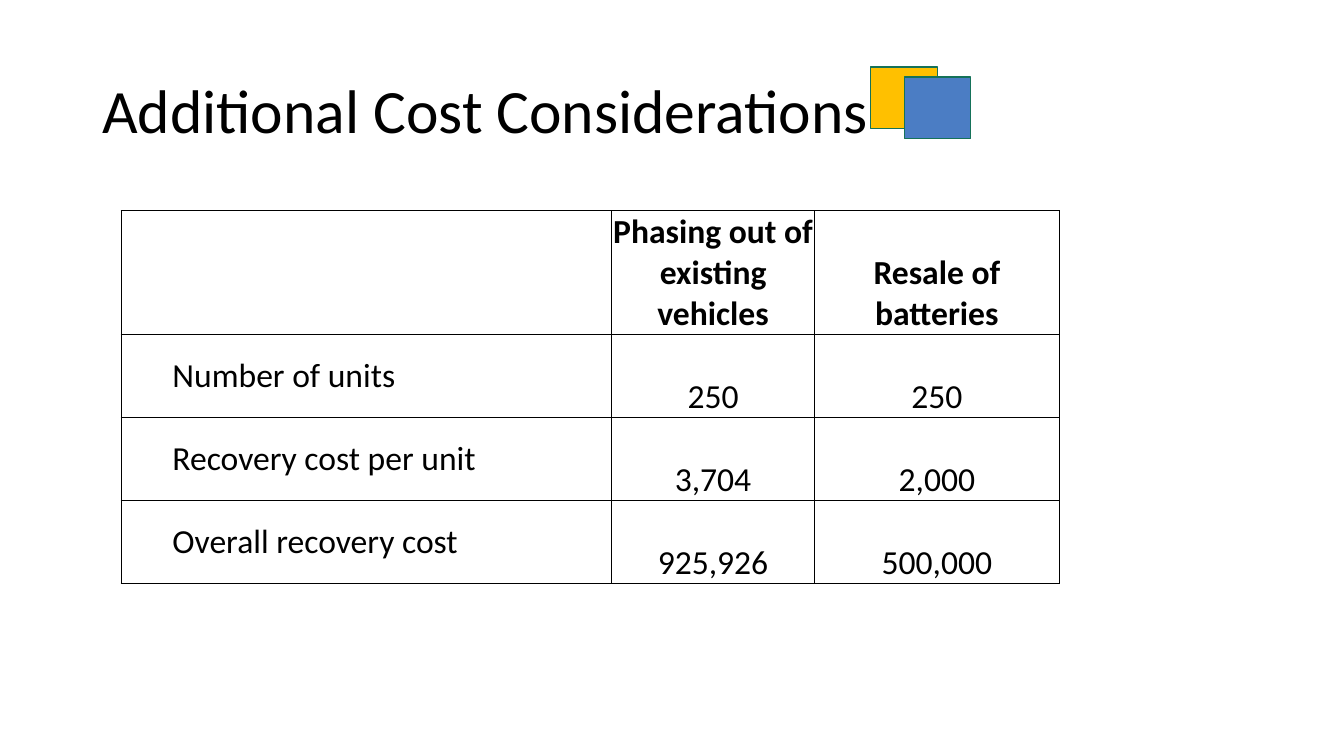
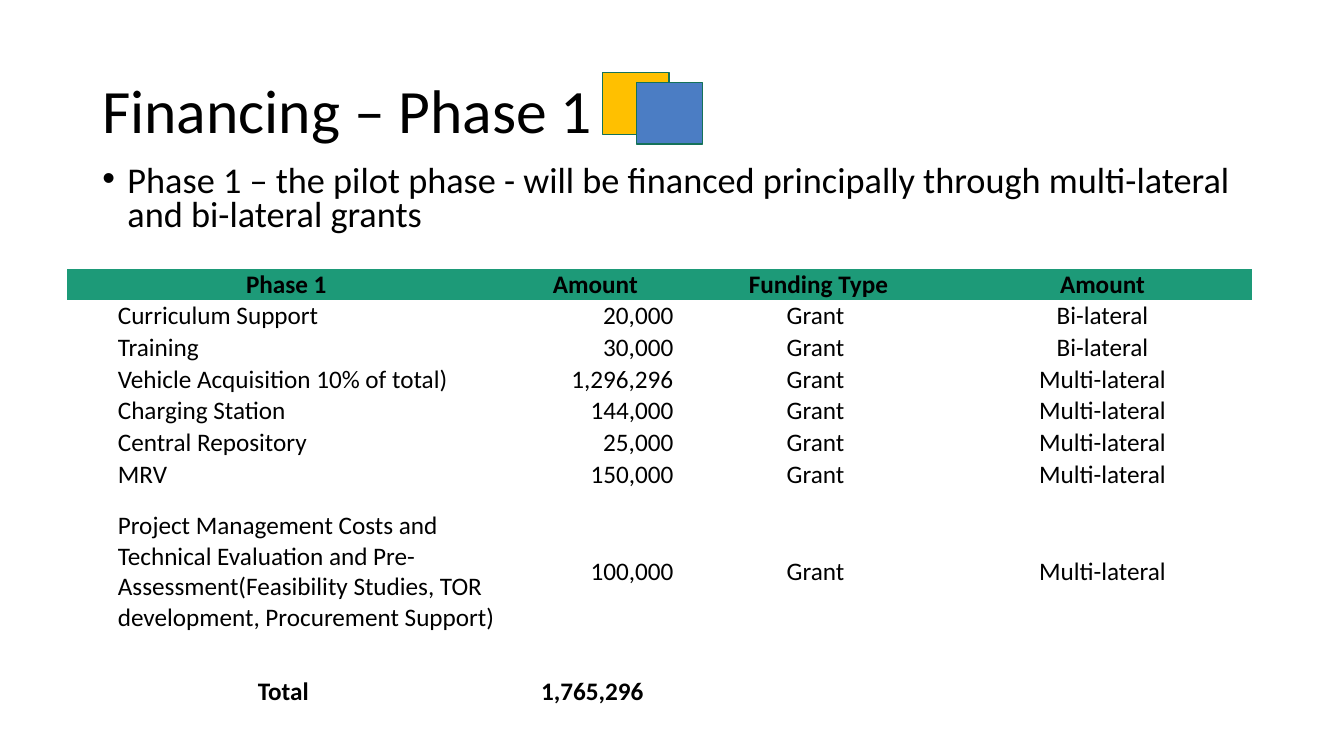
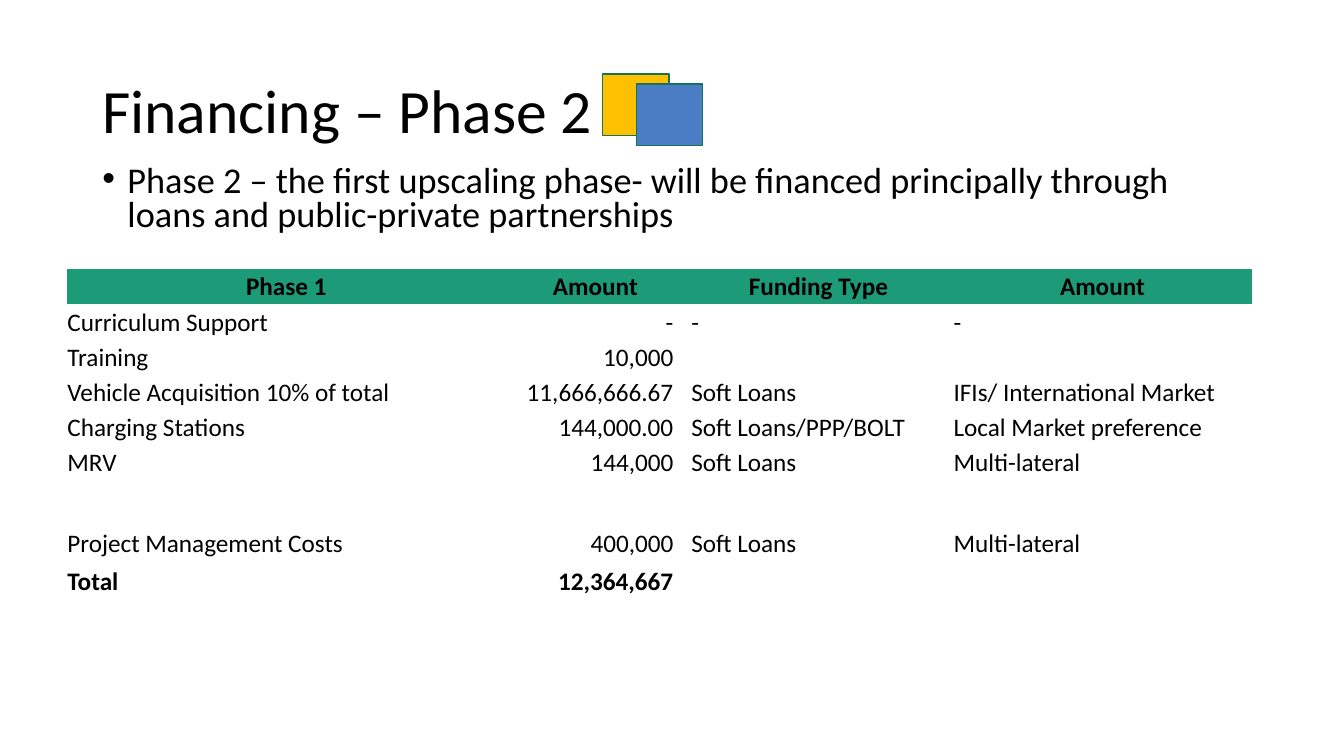
from lxml import etree
from pptx import Presentation
from pptx.dml.color import RGBColor
from pptx.enum import shapes, text as t
from pptx.oxml import ns
from pptx.util import Pt

BLACK = RGBColor(0x00, 0x00, 0x00)
GOLD = RGBColor(0xFF, 0xC0, 0x00)
BLUE = RGBColor(0x4B, 0x7D, 0xC4)
PINE = RGBColor(0x15, 0x72, 0x59)
GREEN = RGBColor(0x1D, 0x9A, 0x78)
FONT = "Calibri"
LEFT, CENTER, RIGHT = t.PP_ALIGN.LEFT, t.PP_ALIGN.CENTER, t.PP_ALIGN.RIGHT
MIDDLE, BOTTOM = t.MSO_ANCHOR.MIDDLE, t.MSO_ANCHOR.BOTTOM
INSET = 0.7
HEADING = dict(align=CENTER, bold=True, left=INSET, right=INSET)
FINANCE_COLS = (314, 127.5, 191.5, 214)
FINANCE_HEAD = ("Phase 1", "Amount", "Funding Type", "Amount")


def write(tf, text, size=18, bold=False, align=LEFT, spacing=None, before=None):
    """Write one formatted paragraph into a text frame and return it."""
    p = tf.paragraphs[0]
    p.alignment, p.line_spacing = align, spacing
    if before is not None:
        p.space_before = Pt(before)
    r = p.add_run()
    r.text = text
    r.font.name, r.font.size, r.font.bold = FONT, Pt(size), bold
    r.font.color.rgb = BLACK
    return p


def text_box(slide, left, top, width, height):
    """Add a wrapping text box and return its text frame."""
    tf = slide.shapes.add_textbox(Pt(left), Pt(top), Pt(width), Pt(height)).text_frame
    tf.word_wrap = True
    return tf


def title(slide, text):
    """Place the slide title."""
    tf = text_box(slide, 66, 29, 828, 104)
    tf.vertical_anchor = MIDDLE
    write(tf, text, size=44, spacing=0.9)


def lead(slide, text):
    """Place the bulleted lead sentence under the title."""
    p = write(text_box(slide, 66, 114.5, 828, 60.5), text, size=25.9, spacing=0.8, before=10)
    pPr = p._p.get_or_add_pPr()
    pPr.set("marL", str(Pt(18)))
    pPr.set("indent", str(Pt(-18)))
    etree.SubElement(pPr, ns.qn("a:buFont")).set("typeface", "Arial")
    etree.SubElement(pPr, ns.qn("a:buChar")).set("char", "•")


def squares(slide, left, top):
    """Place the two overlapping squares beside the title."""
    for step, color in enumerate((GOLD, BLUE)):
        sp = slide.shapes.add_shape(shapes.MSO_SHAPE.RECTANGLE, Pt(left + 24 * step),
                                    Pt(top + 7 * step), Pt(47.5), Pt(44))
        sp.shadow.inherit = False
        sp.fill.solid()
        sp.fill.fore_color.rgb = color
        sp.line.color.rgb = PINE
        sp.line.width = Pt(1)


def borders(cell, color):
    """Draw all four cell borders, or clear them when there is no color."""
    tcPr = cell._tc.get_or_add_tcPr()
    for side in ("lnL", "lnR", "lnT", "lnB"):
        ln = etree.SubElement(tcPr, ns.qn(f"a:{side}"), w=str(Pt(1)))
        if color is None:
            etree.SubElement(ln, ns.qn("a:noFill"))
        else:
            fill = etree.SubElement(ln, ns.qn("a:solidFill"))
            etree.SubElement(fill, ns.qn("a:srgbClr")).set("val", str(color))


def fill_cell(cell, text, line=None, fill=None, anchor=BOTTOM, left=INSET, right=INSET, **fmt):
    """Set the borders, fill, insets and text of one cell."""
    borders(cell, line)
    if fill is None:
        cell.fill.background()
    else:
        cell.fill.solid()
        cell.fill.fore_color.rgb = fill
    cell.margin_left, cell.margin_right = Pt(left), Pt(right)
    cell.margin_top, cell.margin_bottom = Pt(INSET), 0
    cell.vertical_anchor = anchor
    if text:
        write(cell.text_frame, text, **fmt)


def table(slide, left, top, widths, heights, rows, col_formats, row_formats, **common):
    """Place a table; row formats override column formats, which override common ones."""
    frame = slide.shapes.add_table(len(rows), len(widths), Pt(left), Pt(top),
                                   Pt(sum(widths)), Pt(sum(heights)))
    tbl = frame.table
    tbl.first_row = tbl.horz_banding = False
    for column, width in zip(tbl.columns, widths):
        column.width = Pt(width)
    for i, (height, row) in enumerate(zip(heights, rows)):
        tbl.rows[i].height = Pt(height)
        for j, col_format in enumerate(col_formats):
            text = row[j] if j < len(row) else ""
            fill_cell(tbl.cell(i, j), text, **{**common, **col_format, **row_formats.get(i, {})})


def cost_slide(slide):
    """Build the slide on additional costs."""
    title(slide, "Additional Cost Considerations")
    rows = [
        ("", "Phasing out of existing vehicles", "Resale of batteries"),
        ("Number of units", "250", "250"),
        ("Recovery cost per unit", "3,704", "2,000"),
        ("Overall recovery cost", "925,926", "500,000"),
    ]
    value = dict(align=CENTER)
    table(slide, 86.5, 150.5, (350.5, 144.75, 175), [88.5] + [59.25] * 3, rows,
          [dict(left=36.7, anchor=MIDDLE), value, value], {0: HEADING}, size=24, line=BLACK)
    squares(slide, 622, 48)


def finance_slide(slide, heading, sentence, mark_top, heights, rows, col_formats, row_formats):
    """Build a financing slide with its lead sentence and funding table."""
    title(slide, heading)
    lead(slide, sentence)
    header = {0: dict(HEADING, fill=GREEN, anchor=MIDDLE)}
    table(slide, 47.5, 192, FINANCE_COLS, heights, [FINANCE_HEAD] + rows, col_formats,
          {**header, **row_formats})
    squares(slide, 430.5, mark_top)


def main():
    """Build and save the presentation."""
    prs = Presentation()
    prs.slide_width, prs.slide_height = Pt(960), Pt(540)
    first, second, third = (prs.slides.add_slide(prs.slide_layouts[6]) for _ in range(3))
    amount = dict(align=RIGHT, right=8)
    centered = dict(align=CENTER)

    cost_slide(first)
    finance_slide(
        second, "Financing – Phase 1",
        "Phase 1 – the pilot phase - will be financed principally through multi-lateral "
        "and bi-lateral grants",
        52, [22] + [22.6] * 6 + [116.5, 54.5],
        [
            ("Curriculum Support", "20,000", "Grant", "Bi-lateral"),
            ("Training", "30,000", "Grant", "Bi-lateral"),
            ("Vehicle Acquisition 10% of total)", "1,296,296", "Grant", "Multi-lateral"),
            ("Charging Station", "144,000", "Grant", "Multi-lateral"),
            ("Central Repository", "25,000", "Grant", "Multi-lateral"),
            ("MRV", "150,000", "Grant", "Multi-lateral"),
            ("Project Management Costs and Technical Evaluation and "
             "Pre-Assessment(Feasibility Studies, TOR development, Procurement Support)",
             "100,000", "Grant", "Multi-lateral"),
            ("Total", "1,765,296"),
        ],
        [dict(left=36.7), amount, dict(centered, right=5), centered],
        {7: dict(anchor=MIDDLE), 8: dict(HEADING, anchor=MIDDLE, right=5)})
    finance_slide(
        third, "Financing – Phase 2",
        "Phase 2 – the first upscaling phase- will be financed principally through loans "
        "and public-private partnerships",
        53, [25] * 6 + [57.5, 27.5],
        [
            ("Curriculum Support", "-", "-", "-"),
            ("Training", "10,000"),
            ("Vehicle Acquisition 10% of total", "11,666,666.67", "Soft Loans",
             "IFIs/ International Market"),
            ("Charging Stations", "144,000.00", "Soft Loans/PPP/BOLT", "Local Market preference"),
            ("MRV", "144,000", "Soft Loans", "Multi-lateral"),
            ("Project Management Costs", "400,000", "Soft Loans", "Multi-lateral"),
            ("Total", "12,364,667"),
        ],
        [{}, amount, dict(left=4.8), {}],
        {7: dict(bold=True)})
    prs.save("out.pptx")


if __name__ == "__main__":
    main()
